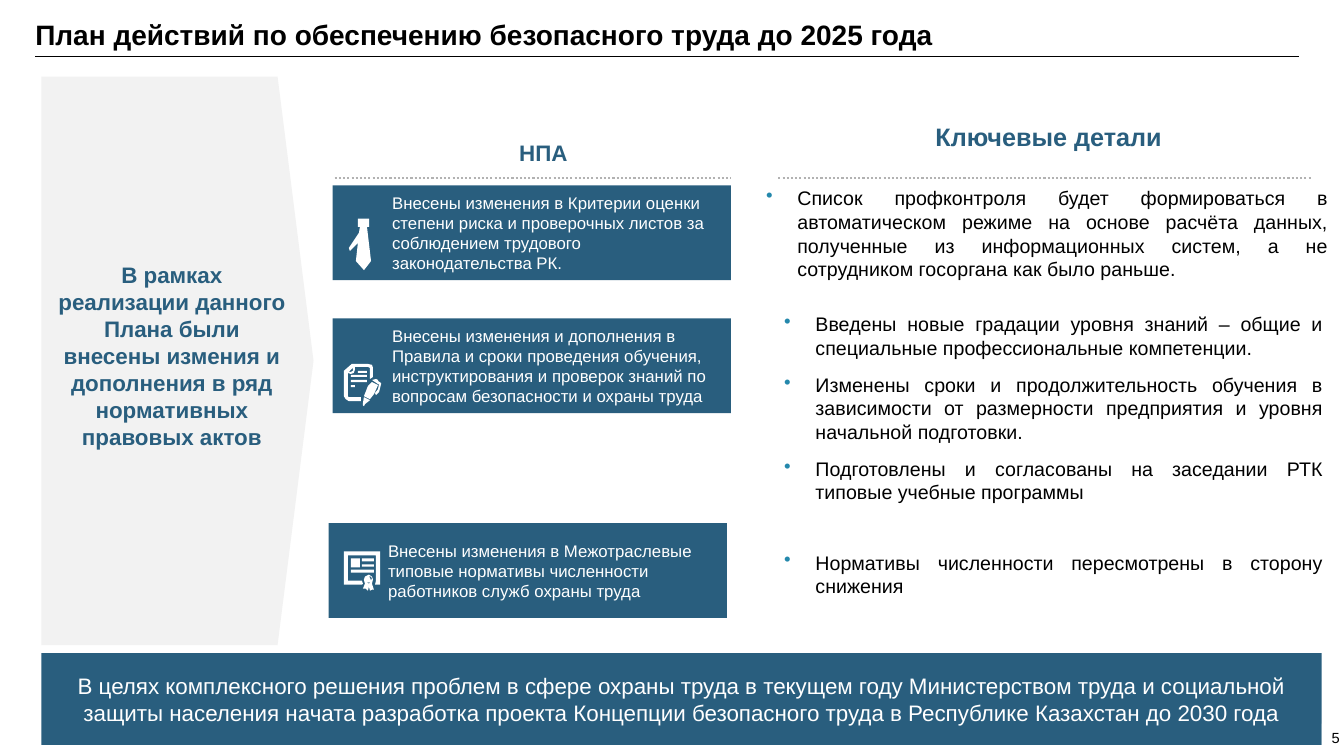
from dataclasses import dataclass
from lxml import etree
from pptx import Presentation
from pptx.dml.color import RGBColor
from pptx.enum.dml import MSO_LINE
from pptx.enum.shapes import MSO_CONNECTOR, MSO_SHAPE
from pptx.enum.text import MSO_ANCHOR, MSO_AUTO_SIZE, PP_ALIGN
from pptx.oxml.ns import qn
from pptx.util import Inches, Pt

STRAIGHT = MSO_CONNECTOR.STRAIGHT
RECTANGLE, PENTAGON = MSO_SHAPE.RECTANGLE, MSO_SHAPE.PENTAGON
TOP, MIDDLE, BOTTOM = MSO_ANCHOR.TOP, MSO_ANCHOR.MIDDLE, MSO_ANCHOR.BOTTOM
LEFT, CENTER, JUSTIFY = PP_ALIGN.LEFT, PP_ALIGN.CENTER, PP_ALIGN.JUSTIFY
DOTTED = MSO_LINE.ROUND_DOT
NO_AUTOFIT = MSO_AUTO_SIZE.NONE


@dataclass(frozen=True)
class Theme:
    font: str = "Arial"
    blue: str = "295E7E"
    bullet: str = "2488AC"
    panel: str = "F2F2F2"
    rule: str = "B2B2B2"
    black: str = "000000"
    white: str = "FFFFFF"
    title: float = 20
    heading: float = 18
    subheading: float = 16
    body: float = 14
    card: float = 12
    number: float = 10.5


@dataclass(frozen=True)
class Box:
    left: float
    top: float
    width: float
    height: float

    def inner(self, left, top, width, height):
        return Box(self.left + left, self.top + top, width, height)

    def lengths(self):
        return [Inches(side) for side in (self.left, self.top, self.width, self.height)]


THEME = Theme()


def bar(left, top, right, bottom):
    return [(left, top), (right, top), (right, bottom), (left, bottom)]


TIE = [[(9, 0), (20, 0), (20, 8), (18, 8), (22, 42), (15, 51), (7, 42), (9, 24),
        (1, 32), (0, 29), (10, 14), (11, 8), (9, 8)]]
DOCUMENT = [
    [(9, 0), (24, 0), (28, 1), (29, 4), (29, 13), (26, 15), (26, 4), (24, 3),
     (11, 3), (11, 6), (10, 9), (7, 10), (4, 9), (4, 32), (5, 33), (17, 33),
     (17, 37), (5, 37), (2, 35), (0, 32), (0, 7), (8, 0)],
    [(34, 17), (34, 16), (32, 15), (28, 16), (31, 18), (34, 20), (35, 20),
     (34, 25), (31, 29), (32, 31), (35, 28), (37, 20), (37, 19)],
    [(28, 18), (24, 22), (20, 32), (26, 35), (30, 30), (34, 21)],
    [(20, 33), (19, 39), (19, 41), (20, 42), (21, 40), (26, 36)],
    [(5, 8), (7, 8), (9, 7), (9, 4)],
    bar(7, 21, 11, 23), bar(7, 16, 23, 18), bar(7, 11, 23, 13), bar(14, 7, 23, 9),
]
CERTIFICATE = [
    [(0, 0), (36, 0), (36, 33), (31, 33), (32, 29), (32, 4), (4, 4), (4, 29),
     (18, 29), (19, 32), (18, 33), (0, 33)],
    [(25, 23), (21, 25), (20, 28), (21, 32), (19, 37), (22, 37), (24, 39),
     (25, 35), (26, 39), (28, 38), (30, 38), (28, 32), (29, 28), (28, 25)],
    [(27, 30), (25, 31), (22, 30), (25, 32)],
    [(24, 25), (26, 26), (27, 29), (28, 27), (27, 25)],
    bar(7, 18, 30, 21), bar(18, 13, 30, 15), bar(18, 7, 30, 10), bar(7, 7, 16, 16),
]


def color(value):
    return RGBColor.from_string(value)


def fill_plain(shape, fill):
    shape.shadow.inherit = False
    shape.fill.solid()
    shape.fill.fore_color.rgb = color(fill)
    shape.line.fill.background()


def add_block(page, box, fill, kind=RECTANGLE):
    shape = page.shapes.add_shape(kind, *box.lengths())
    fill_plain(shape, fill)
    return shape


def prepare_frame(shape, anchor, inset=None):
    frame = shape.text_frame
    frame.word_wrap = True
    frame.auto_size = NO_AUTOFIT
    frame.vertical_anchor = anchor
    if inset is not None:
        frame.margin_left = frame.margin_right = Inches(inset)
        frame.margin_top = frame.margin_bottom = Inches(inset)
    return frame


def write(para, text, size, ink, align=LEFT, bold=False):
    para.alignment = align
    span = para.add_run()
    span.text = text
    span.font.name = THEME.font
    span.font.size = Pt(size)
    span.font.bold = bold
    span.font.color.rgb = color(ink)


def add_label(page, box, text, size, anchor=BOTTOM):
    frame = prepare_frame(page.shapes.add_textbox(*box.lengths()), anchor, 0)
    write(frame.paragraphs[0], text, size, THEME.blue, CENTER, True)


def add_rule(page, left, top, width, ink, weight, dash=None):
    rule = page.shapes.add_connector(
        STRAIGHT, Inches(left), Inches(top), Inches(left + width), Inches(top))
    rule.line.color.rgb = color(ink)
    rule.line.width = Pt(weight)
    if dash is not None:
        rule.line.dash_style = dash
    etree.SubElement(rule._element.spPr, qn("a:effectLst"))


def add_icon(page, left, top, contours):
    builder = page.shapes.build_freeform(*contours[0][0], scale=Inches(0.01))
    for index, contour in enumerate(contours):
        if index:
            builder.move_to(*contour[0])
        builder.add_line_segments(contour[1:], close=True)
    fill_plain(builder.convert_to_shape(Inches(left), Inches(top)), THEME.white)


def add_title(page, box, text):
    title = page.shapes.title
    title.left, title.top, title.width, title.height = box.lengths()
    frame = prepare_frame(title, MIDDLE, 0)
    write(frame.paragraphs[0], text, THEME.title, THEME.black, LEFT, True)
    add_rule(page, box.left, box.top + 0.39, 12.53, THEME.black, 0.5)


def add_reason(page, box, text):
    arrow = add_block(page, box, THEME.panel, PENTAGON)
    arrow.adjustments[0] = 0.132
    add_label(page, box.inner(0.16, 1.83, 2.27, 1.87), text, THEME.subheading)


def add_card(page, box, text, icon, icon_left, icon_top):
    frame = prepare_frame(add_block(page, box, THEME.blue), MIDDLE)
    para = frame.paragraphs[0]
    para._p.get_or_add_pPr().set("marL", str(Inches(0.49)))
    write(para, text, THEME.card, THEME.white)
    add_icon(page, box.left + icon_left, box.top + icon_top, icon)


def add_bullets(page, box, items):
    frame = prepare_frame(page.shapes.add_textbox(*box.lengths()), TOP)
    for index, (text, gap) in enumerate(items):
        para = frame.add_paragraph() if index else frame.paragraphs[0]
        settings = para._p.get_or_add_pPr()
        settings.set("marL", str(Inches(0.63)))
        settings.set("indent", str(Inches(-0.31)))
        tint = etree.SubElement(settings, qn("a:buClr"))
        etree.SubElement(tint, qn("a:srgbClr"), val=THEME.bullet)
        etree.SubElement(settings, qn("a:buChar"), char="•")
        if index:
            para.space_before = Pt(gap)
        write(para, text, THEME.body, THEME.black, JUSTIFY)


def add_acts(page, box):
    add_label(page, box.inner(-0.74, 0, 5.66, 0.96), "НПА", THEME.subheading)
    add_rule(page, box.left + 0.02, box.top + 1.08, 3.93, THEME.rule, 1.5, DOTTED)
    cards = [
        (0, 1.15, "Внесены изменения в Критерии оценки степени риска и проверочных листов за соблюдением трудового законодательства РК.", TIE, 0.16, 0.33),
        (0, 2.47, "Внесены изменения и дополнения в Правила и сроки проведения обучения, инструктирования и проверок знаний по вопросам безопасности и охраны труда", DOCUMENT, 0.11, 0.45),
        (-0.04, 4.5, "Внесены изменения в Межотраслевые типовые нормативы численности работников служб охраны труда", CERTIFICATE, 0.15, 0.28),
    ]
    for left, top, *content in cards:
        add_card(page, box.inner(left, top, box.width, 0.94), *content)


def add_details(page, box):
    add_label(page, box.inner(0.56, 0, 5.32, 0.96), "Ключевые детали", THEME.heading)
    add_rule(page, box.left + 0.54, box.top + 1.23, 5.28, THEME.rule, 1.5, DOTTED)
    add_bullets(page, box.inner(0, 1.26, 6.09, 1.04), [
        ("Список профконтроля будет формироваться в автоматическом режиме на основе расчёта данных, полученные из информационных систем, а не сотрудником госоргана как было раньше.", 0),
    ])
    add_bullets(page, box.inner(0.18, 2.51, 5.86, 2.96), [
        ("Введены новые градации уровня знаний – общие и специальные профессиональные компетенции.", 0),
        ("Изменены сроки и продолжительность обучения в зависимости от размерности предприятия и уровня начальной подготовки.", 9.5),
        ("Подготовлены и согласованы на заседании РТК типовые учебные программы", 9.5),
        ("Нормативы численности пересмотрены в сторону снижения", 33.5),
    ])


def add_conclusion(page, box, text):
    frame = prepare_frame(add_block(page, box, THEME.blue), MIDDLE, 0)
    write(frame.paragraphs[0], text, THEME.subheading, THEME.white, CENTER)


def add_page_number(page, box, number):
    frame = prepare_frame(add_block(page, box, THEME.white), TOP)
    frame.word_wrap = False
    write(frame.paragraphs[0], number, THEME.number, THEME.black)


def main():
    deck = Presentation()
    deck.slide_width, deck.slide_height = Inches(13.33), Inches(7.5)
    page = deck.slides.add_slide(deck.slide_layouts[5])
    add_title(page, Box(0.35, 0.17, 12.32, 0.34), "План действий по обеспечению безопасного труда до 2025 года")
    add_conclusion(page, Box(0.41, 6.48, 12.7, 0.91), "В целях комплексного решения проблем в сфере охраны труда в текущем году Министерством труда и социальной защиты населения начата разработка проекта Концепции безопасного труда в Республике Казахстан до 2030 года")
    add_reason(page, Box(0.41, 0.76, 2.7, 5.64), "В рамках реализации данного Плана были внесены измения и дополнения в ряд нормативных правовых актов")
    add_acts(page, Box(3.3, 0.69, 3.95, 5.44))
    add_details(page, Box(7.18, 0.54, 6.09, 5.47))
    add_page_number(page, Box(13.11, 7.18, 0.22, 0.29), "5")
    deck.save("out.pptx")


if __name__ == "__main__":
    main()
